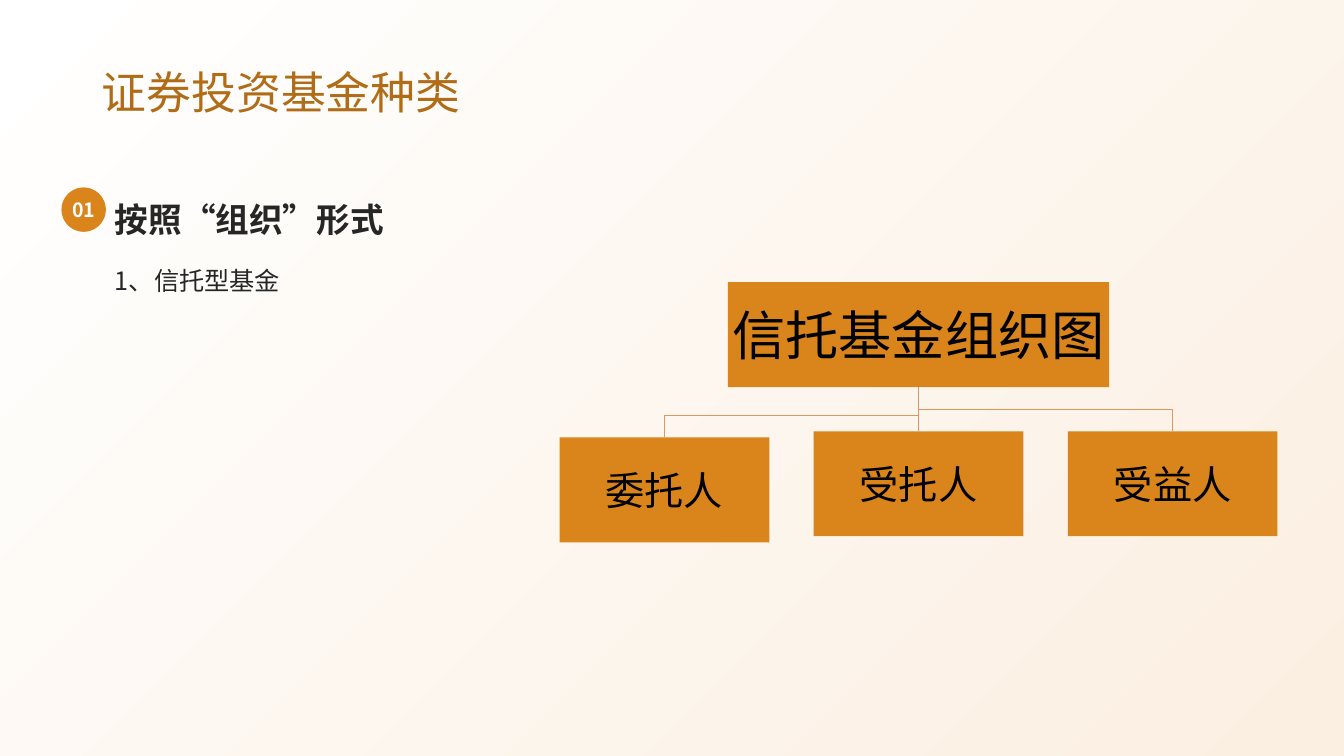
from dataclasses import dataclass

from lxml import etree
from pptx import Presentation
from pptx.dml.color import RGBColor
from pptx.enum import shapes, text
from pptx.oxml import ns
from pptx.util import Inches, Pt

FONT = "Noto Sans CJK SC"
ORANGE, BROWN, LINE = "DA841C", "B16C17", "DE9760"
DARK, BLACK, WHITE, CREAM = "262626", "000000", "FFFFFF", "FBEFE1"
LEFT, CENTER = text.PP_ALIGN.LEFT, text.PP_ALIGN.CENTER
JUSTIFY = text.PP_ALIGN.JUSTIFY


@dataclass
class Label:
    words: str
    size: float
    color: str
    bold: bool = False
    align: text.PP_ALIGN = CENTER
    anchor: text.MSO_ANCHOR = text.MSO_ANCHOR.MIDDLE
    spacing: float = 1.0
    wrap: bool = False


@dataclass
class Node:
    left: float
    top: float
    width: float
    label: Label
    height: float = 1.04

    @property
    def center(self) -> float:
        return self.left + self.width / 2


def rgb(color: str) -> RGBColor:
    return RGBColor.from_string(color)


def write(shape, label: Label) -> None:
    frame = shape.text_frame
    frame.margin_left = frame.margin_right = 0
    frame.margin_top = frame.margin_bottom = 0
    frame.auto_size = text.MSO_AUTO_SIZE.NONE
    frame.word_wrap = label.wrap
    frame.vertical_anchor = label.anchor
    para = frame.paragraphs[0]
    para.text = label.words
    para.alignment = label.align
    para.line_spacing = label.spacing
    font = para.font
    font.name, font.size, font.bold = FONT, Pt(label.size), label.bold
    font.color.rgb = rgb(label.color)
    # East Asian typeface follows the Latin one
    latin = para._p.find(".//" + ns.qn("a:latin"))
    east_asian = etree.Element(ns.qn("a:ea"), typeface=FONT)
    latin.addnext(east_asian)


def add_filled(page, kind: shapes.MSO_SHAPE, left: float, top: float,
               width: float, height: float, label: Label) -> None:
    box = page.shapes.add_shape(kind, Inches(left), Inches(top),
                                Inches(width), Inches(height))
    box.shadow.inherit = False
    box.fill.solid()
    box.fill.fore_color.rgb = rgb(ORANGE)
    box.line.fill.background()
    write(box, label)


def add_text(page, left: float, top: float, width: float, height: float,
             label: Label) -> None:
    box = page.shapes.add_textbox(Inches(left), Inches(top),
                                  Inches(width), Inches(height))
    write(box, label)


def add_branch(page, parent: Node, child: Node, drop: float = 0.22) -> None:
    start_x, start_y = Inches(parent.center), Inches(parent.top + parent.height)
    end_x, end_y = Inches(child.center), Inches(child.top)
    if abs(parent.center - child.center) < 0.01:
        branch = page.shapes.add_connector(
            shapes.MSO_CONNECTOR.STRAIGHT, start_x, start_y, end_x, end_y)
        etree.SubElement(branch._element.spPr, ns.qn("a:effectLst"))
    else:
        bend = Inches(child.top - drop)
        builder = page.shapes.build_freeform(start_x, start_y)
        builder.add_line_segments(
            [(start_x, bend), (end_x, bend), (end_x, end_y)], close=False)
        branch = builder.convert_to_shape()
        branch.fill.background()
        branch.shadow.inherit = False
    branch.line.color.rgb = rgb(LINE)
    branch.line.width = Pt(1)


def main() -> None:
    deck = Presentation()
    deck.slide_width, deck.slide_height = Inches(13.33), Inches(7.5)
    page = deck.slides.add_slide(deck.slide_layouts[5])

    # Background
    fill = page.background.fill
    fill.gradient()
    fill.gradient_angle = 315
    for stop, color in zip(fill.gradient_stops, (WHITE, CREAM)):
        stop.color.rgb = rgb(color)

    # Title
    title = page.shapes.title
    title.left, title.top = Inches(1.01), Inches(0.39)
    title.width, title.height = Inches(11.3), Inches(0.79)
    write(title, Label("证券投资基金种类", 32, BROWN, align=LEFT,
                       anchor=text.MSO_ANCHOR.BOTTOM, wrap=True))

    # Organisation chart
    root = Node(7.22, 2.8, 3.78, Label("信托基金组织图", 38, BLACK))
    children = [
        Node(root.center - 1.04 + offset, top, 2.08, Label(name, 28, BLACK))
        for name, offset, top in (("委托人", -2.52, 4.34),
                                  ("受托人", 0, 4.28),
                                  ("受益人", 2.52, 4.28))
    ]
    for child in children:
        add_branch(page, root, child)
    for node in (root, *children):
        add_filled(page, shapes.MSO_SHAPE.RECTANGLE, node.left, node.top,
                   node.width, node.height, node.label)

    # Numbered heading and its item
    top_anchor = text.MSO_ANCHOR.TOP
    add_text(page, 1.14, 1.77, 5.22, 0.62,
             Label("按照“组织”形式", 24, DARK, True, JUSTIFY, top_anchor, 1.5, True))
    add_filled(page, shapes.MSO_SHAPE.OVAL, 0.61, 1.86, 0.44, 0.44,
               Label("01", 14, WHITE, True))
    add_text(page, 1.14, 2.48, 5.22, 0.56,
             Label("1、信托型基金", 18, DARK, False, JUSTIFY, top_anchor, 1.5, True))

    deck.save("out.pptx")


if __name__ == "__main__":
    main()
